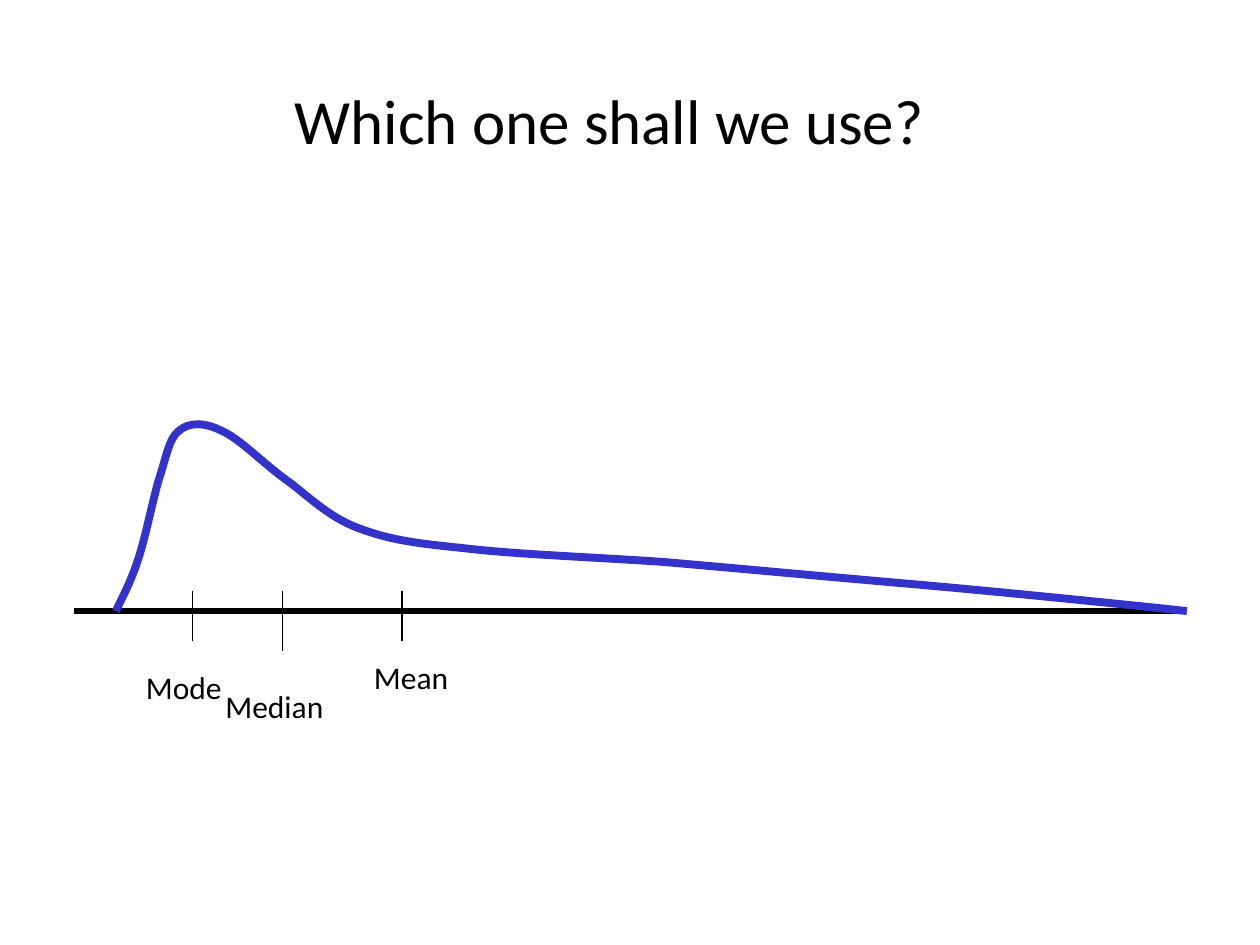
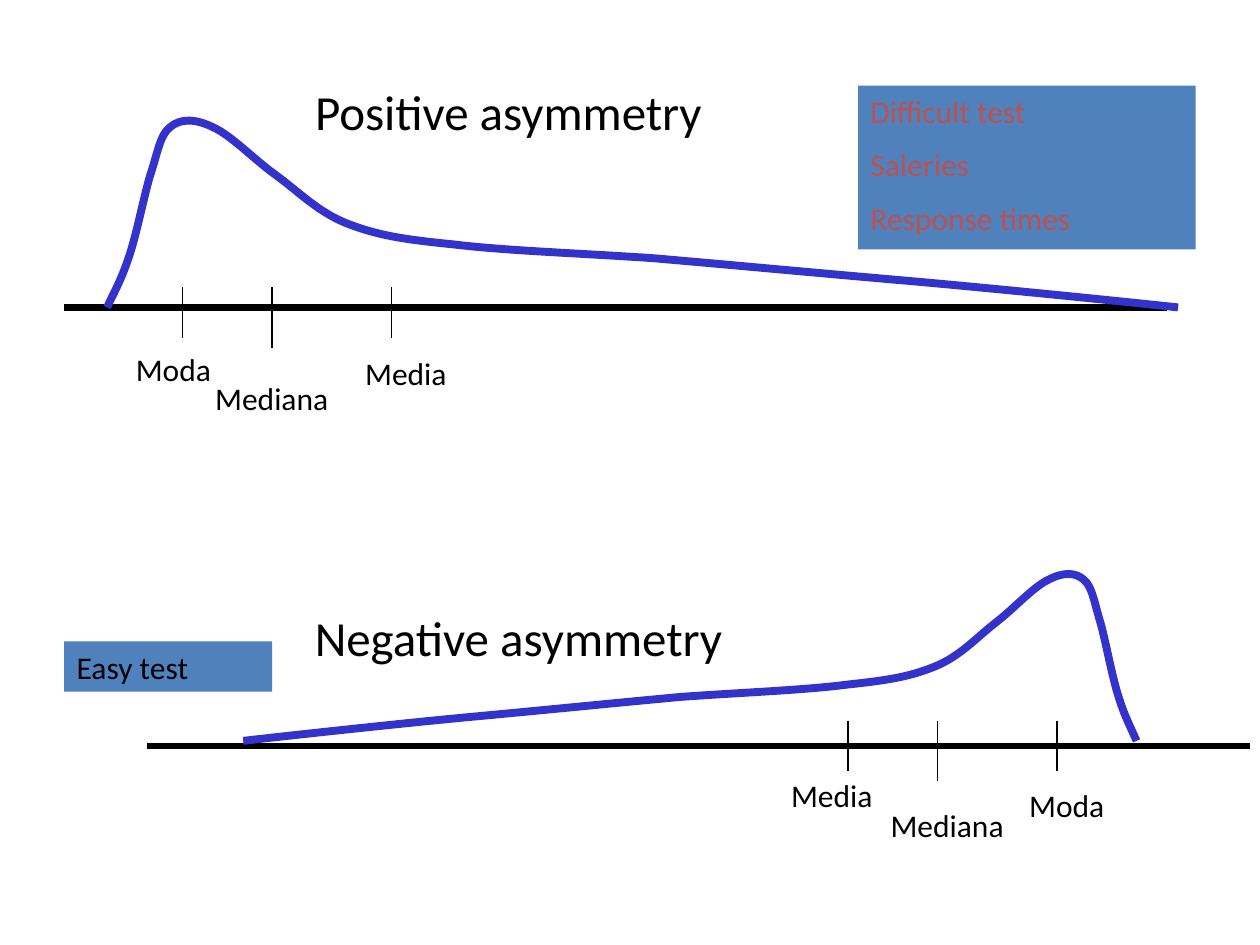
"""Build two slides comparing mode, median and mean on skewed distributions."""
from lxml import etree
from pptx import Presentation
from pptx.dml.color import RGBColor
from pptx.enum.shapes import MSO_CONNECTOR, MSO_SHAPE
from pptx.enum.text import MSO_ANCHOR, MSO_AUTO_SIZE, PP_ALIGN
from pptx.oxml.ns import qn
from pptx.util import Inches, Pt

STRAIGHT = MSO_CONNECTOR.STRAIGHT
RECTANGLE = MSO_SHAPE.RECTANGLE
TOP = MSO_ANCHOR.TOP
LEFT = PP_ALIGN.LEFT
GROW = MSO_AUTO_SIZE.SHAPE_TO_FIT_TEXT

BLACK = RGBColor(0x00, 0x00, 0x00)
CURVE_BLUE = RGBColor(0x33, 0x33, 0xCC)
PANEL_BLUE = RGBColor(0x4F, 0x81, 0xBD)
RED = RGBColor(0xC0, 0x50, 0x4D)
FONT = "Calibri"
TITLE_ONLY = 5

CURVE_CONTROLS = [
    (0.05, 0.11), (0.11, 0.21), (0.17, 0.39),
    (0.23, 0.56), (0.29, 0.87), (0.34, 1.04),
    (0.4, 1.22), (0.42, 1.37), (0.5, 1.43),
    (0.58, 1.5), (0.7, 1.5), (0.84, 1.43),
    (0.98, 1.37), (1.16, 1.18), (1.34, 1.05),
    (1.52, 0.92), (1.68, 0.75), (1.92, 0.66),
    (2.16, 0.57), (2.35, 0.54), (2.75, 0.5),
    (3.16, 0.45), (3.75, 0.43), (4.34, 0.39),
    (4.92, 0.34), (5.56, 0.28), (6.25, 0.22),
    (6.95, 0.16), (8.13, 0.04), (8.5, 0),
]
AXIS_LENGTH = 8.75
TICK_OFFSETS = (0, 0.71, 1.66)
TICK_LENGTHS = (0.4, 0.48, 0.4)


def write_text(box, place, lines, size, color=BLACK, wrap=True):
    """Place a box and fill it with left-aligned lines."""
    for name, value in zip(("left", "top", "width", "height"), place):
        setattr(box, name, Inches(value))
    frame = box.text_frame
    frame_format = {"word_wrap": wrap, "auto_size": GROW, "vertical_anchor": TOP}
    for name, value in frame_format.items():
        setattr(frame, name, value)
    for index, line in enumerate(lines):
        para = frame.add_paragraph() if index else frame.paragraphs[0]
        para.alignment = LEFT
        para.space_before = Pt(size / 2 if index else 0)
        span = para.add_run()
        span.text = line
        for name, value in {"name": FONT, "size": Pt(size), "bold": False}.items():
            setattr(span.font, name, value)
        span.font.color.rgb = color


def draw_line(page, start, end, weight):
    """Draw a plain black line between two points."""
    ends = [Inches(value) for value in (*start, *end)]
    line = page.shapes.add_connector(STRAIGHT, *ends)
    line.line.color.rgb = BLACK
    line.line.width = Pt(weight)
    etree.SubElement(line._element.spPr, qn("a:effectLst"))


deck = Presentation()
deck.slide_width = Inches(10)
deck.slide_height = Inches(7.5)
layout = deck.slide_layouts[TITLE_ONLY]
question_page = deck.slides.add_slide(layout)
asymmetry_page = deck.slides.add_slide(layout)

write_text(question_page.shapes.title, (2.24, 0.6, 5.51, 0.7),
           ["Which one shall we use?"], 36)
write_text(asymmetry_page.shapes.title, (2.4, 0.6, 4.17, 0.57),
           ["Positive asymmetry"], 28)
negative_heading = asymmetry_page.shapes.add_textbox(0, 0, 0, 0)
write_text(negative_heading, (2.4, 4.77, 4.17, 0.57), ["Negative asymmetry"], 28)

distributions = [
    {"page": question_page, "axis": (0.59, 4.85), "curve": (0.92, 4.85),
     "scale": (1, 1), "tick": (1.53, 4.69),
     "labels": [("Mode", 1.06, 5.25, 0.87), ("Median", 1.69, 5.4, 0.99),
                ("Mean", 2.87, 5.17, 1.73)]},
    {"page": asymmetry_page, "axis": (0.51, 2.44), "curve": (0.85, 2.44),
     "scale": (1, 1), "tick": (1.45, 2.28),
     "labels": [("Moda", 0.98, 2.73, 0.87), ("Mediana", 1.61, 2.96, 1.16),
                ("Media", 2.8, 2.76, 1.73)]},
    {"page": asymmetry_page, "axis": (1.17, 5.92), "curve": (9.02, 5.88),
     "scale": (-7.09 / 8.5, 1.34 / 1.5), "tick": (6.73, 5.72),
     "labels": [("Media", 6.18, 6.11, 1.18), ("Mediana", 6.97, 6.35, 1.16),
                ("Moda", 8.07, 6.19, 1.73)]},
]

for distribution in distributions:
    page = distribution["page"]
    axis_left, axis_top = distribution["axis"]
    draw_line(page, (axis_left, axis_top), (axis_left + AXIS_LENGTH, axis_top), 3.6)

    curve_left, curve_base = distribution["curve"]
    scale_x, scale_y = distribution["scale"]
    builder = page.shapes.build_freeform(Inches(curve_left), Inches(curve_base))
    builder.add_line_segments(
        [(Inches(curve_left + x * scale_x), Inches(curve_base - y * scale_y))
         for x, y in CURVE_CONTROLS], close=False)
    curve = builder.convert_to_shape()
    outline = next(curve._element.iter(qn("a:path")))
    for index, segment in enumerate(outline.findall(qn("a:lnTo"))):
        if index % 3 == 0:
            bend = etree.SubElement(outline, qn("a:cubicBezTo"))
        bend.append(segment[0])
        outline.remove(segment)
    curve.shadow.inherit = False
    curve.fill.background()
    curve.line.color.rgb = CURVE_BLUE
    curve.line.width = Pt(4.5)

    tick_left, tick_top = distribution["tick"]
    ticks = zip(TICK_OFFSETS, TICK_LENGTHS, distribution["labels"])
    for offset, length, (word, left, top, width) in ticks:
        tick_x = tick_left + offset
        draw_line(page, (tick_x, tick_top), (tick_x, tick_top + length), 0.75)
        label = page.shapes.add_textbox(0, 0, 0, 0)
        write_text(label, (left, top, width, 0.4), [word], 18,
                   wrap=not word.startswith("Median"))

panels = [
    ((6.81, 0.68, 2.68, 1.3), ["Difficult test", "Saleries", "Response times"], RED),
    ((0.51, 5.09, 1.65, 0.4), ["Easy test"], BLACK),
]
for place, lines, color in panels:
    panel = asymmetry_page.shapes.add_shape(RECTANGLE, 0, 0, 0, 0)
    panel.shadow.inherit = False
    panel.fill.solid()
    panel.fill.fore_color.rgb = PANEL_BLUE
    panel.line.fill.background()
    write_text(panel, place, lines, 18, color)

deck.save("out.pptx")
